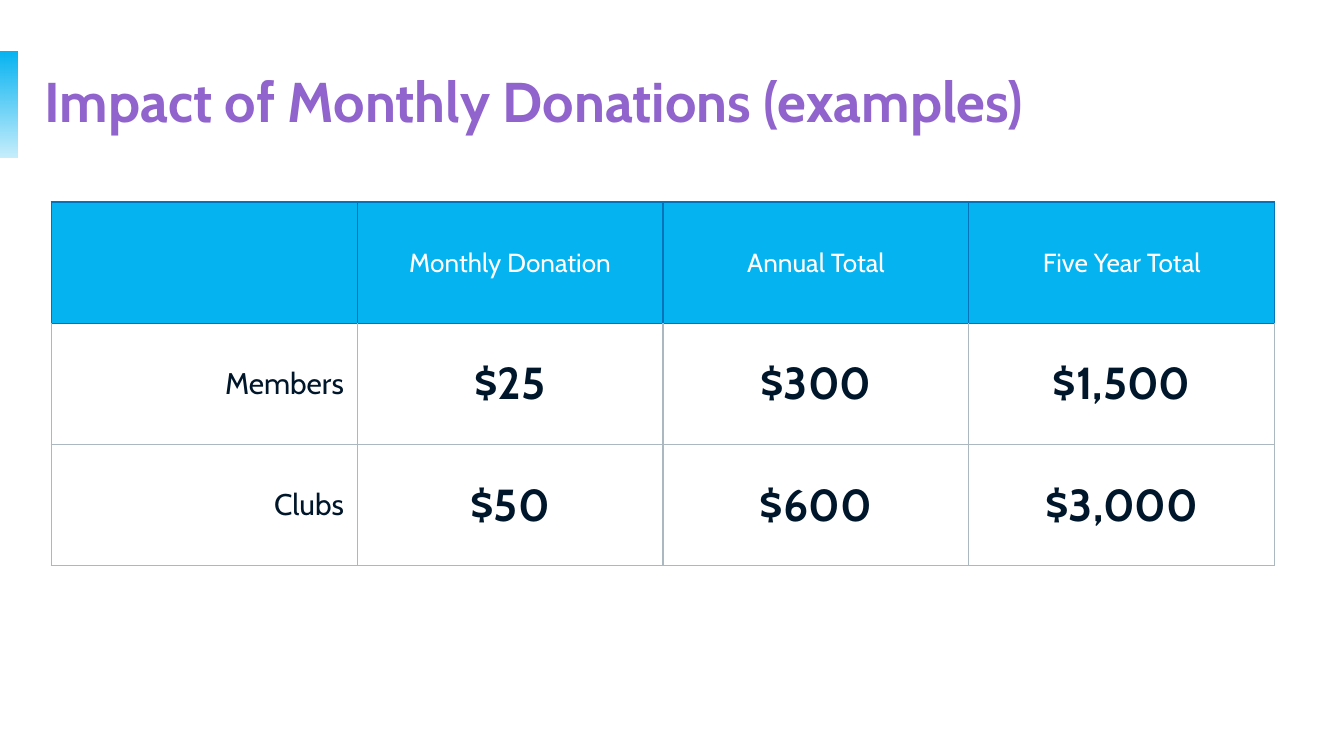
from lxml import etree
from pptx import Presentation
from pptx.dml.color import RGBColor
from pptx.enum.shapes import MSO_SHAPE
from pptx.enum.text import MSO_ANCHOR, PP_ALIGN
from pptx.oxml import parse_xml
from pptx.oxml.ns import nsdecls, qn
from pptx.util import Cm, Pt

RECTANGLE = MSO_SHAPE.RECTANGLE
MIDDLE = MSO_ANCHOR.MIDDLE
LEFT, CENTER, RIGHT = PP_ALIGN.LEFT, PP_ALIGN.CENTER, PP_ALIGN.RIGHT

FONT = "Cabin"
COLORS = {
    "title": "9063CD",
    "accent": "05B3F1",
    "header_border": "0073BB",
    "body_border": "ABB8C0",
    "header_text": "FFFFFF",
    "body_text": "00162A",
}
TITLE = "Impact of Monthly Donations (examples)"
DONATIONS = [
    ["", "Monthly Donation", "Annual Total", "Five Year Total"],
    ["Members", "$25", "$300", "$1,500"],
    ["Clubs", "$50", "$600", "$3,000"],
]


def rgb(name):
    return RGBColor.from_string(COLORS[name])


def style_paragraph(paragraph, size, color, align, bold=False):
    paragraph.alignment = align
    font = paragraph.font
    font.name, font.size, font.bold = FONT, Pt(size), bold
    font.color.rgb = rgb(color)


def add_accent_bar(slide, left, top, width, height):
    """Bar that fades out towards its lower end."""
    bar = slide.shapes.add_shape(RECTANGLE, left, top, width, height)
    bar.shadow.inherit = False
    bar.line.fill.background()
    bar.fill.gradient()
    bar.fill.gradient_angle = 90
    for stop in bar.fill.gradient_stops:
        stop.color.rgb = rgb("accent")
    faded = next(bar.element.iter(qn("a:srgbClr")))
    etree.SubElement(faded, qn("a:alpha"), val="22000")


def add_title(slide, left, top, width, height):
    title = slide.shapes.title
    title.left, title.top, title.width, title.height = left, top, width, height
    frame = title.text_frame
    frame.text = TITLE
    frame.word_wrap = True
    frame.vertical_anchor = MIDDLE
    frame.margin_left = frame.margin_right = 0
    frame.margin_top = frame.margin_bottom = 0
    heading = frame.paragraphs[0]
    heading.line_spacing = 0.9
    style_paragraph(heading, 30, "title", LEFT, bold=True)


def set_borders(cell, top_color, side_color):
    """Draw the four cell borders; the top one may differ in colour."""
    properties = cell._tc.get_or_add_tcPr()
    for index, side in enumerate("LRTB"):
        color = COLORS[top_color if side == "T" else side_color]
        properties.insert(index, parse_xml(
            f'<a:ln{side} {nsdecls("a")} w="9525"><a:solidFill>'
            f'<a:srgbClr val="{color}"/></a:solidFill></a:ln{side}>'))


def format_cell(cell, row, column):
    cell.vertical_anchor = MIDDLE
    cell.margin_left = cell.margin_right = Cm(0.25)
    cell.margin_top = cell.margin_bottom = Cm(0.18)
    label = cell.text_frame.paragraphs[0]
    if row == 0:
        cell.fill.solid()
        cell.fill.fore_color.rgb = rgb("accent")
        style_paragraph(label, 14, "header_text", CENTER)
        set_borders(cell, "header_border", "header_border")
        return
    cell.fill.background()
    if column == 0:
        style_paragraph(label, 16, "body_text", RIGHT)
    else:
        style_paragraph(label, 24, "body_text", CENTER, bold=True)
    set_borders(cell, "header_border" if row == 1 else "body_border", "body_border")


def add_donation_table(slide, left, top, width, height):
    table = slide.shapes.add_table(
        len(DONATIONS), len(DONATIONS[0]), left, top, width, height).table
    table.horz_banding = False
    for row, values in enumerate(DONATIONS):
        for column, value in enumerate(values):
            cell = table.cell(row, column)
            cell.text = value
            format_cell(cell, row, column)


def main():
    presentation = Presentation()
    presentation.slide_width, presentation.slide_height = Cm(25.4), Cm(14.29)
    slide = presentation.slides.add_slide(presentation.slide_layouts[5])
    add_accent_bar(slide, Cm(-0.02), Cm(0.98), Cm(0.36), Cm(1.99))
    add_title(slide, Cm(0.84), Cm(0.98), Cm(23.55), Cm(1.99))
    add_donation_table(slide, Cm(0.97), Cm(3.82), Cm(23.12), Cm(6.87))
    presentation.save("out.pptx")


if __name__ == "__main__":
    main()
